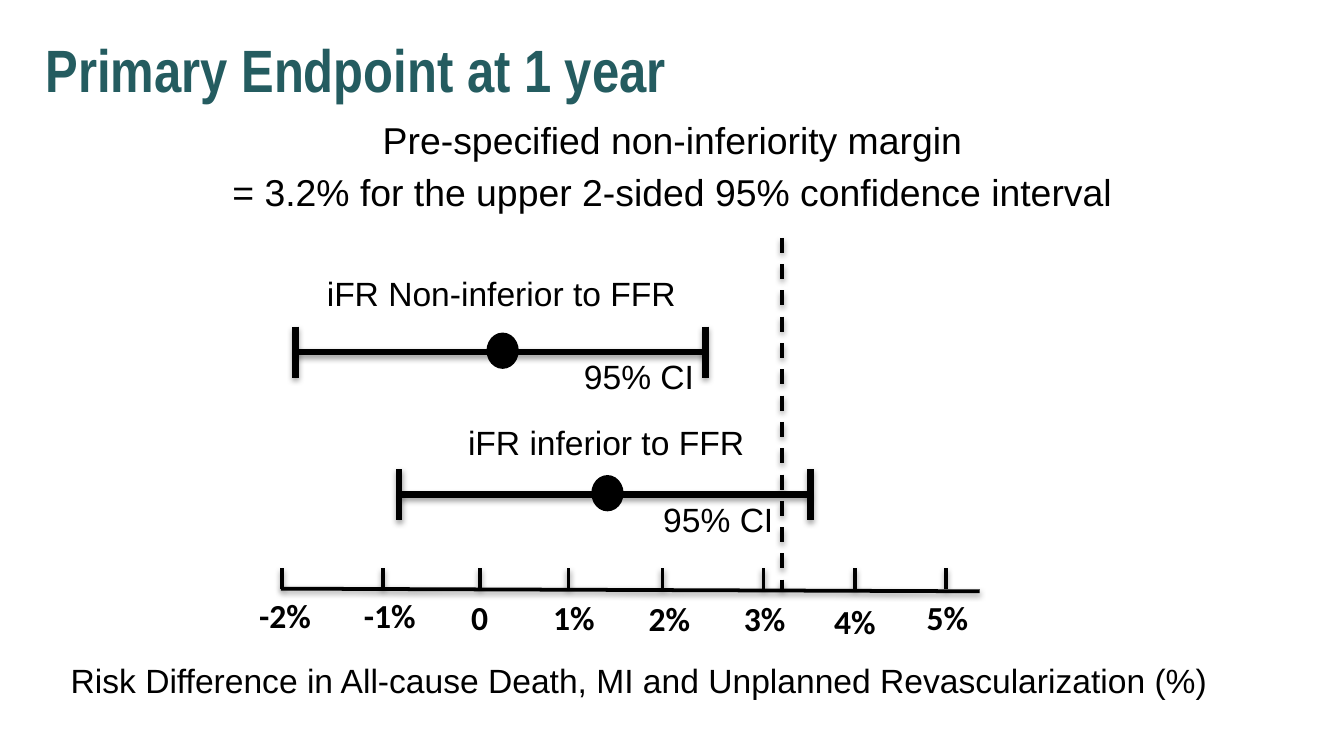
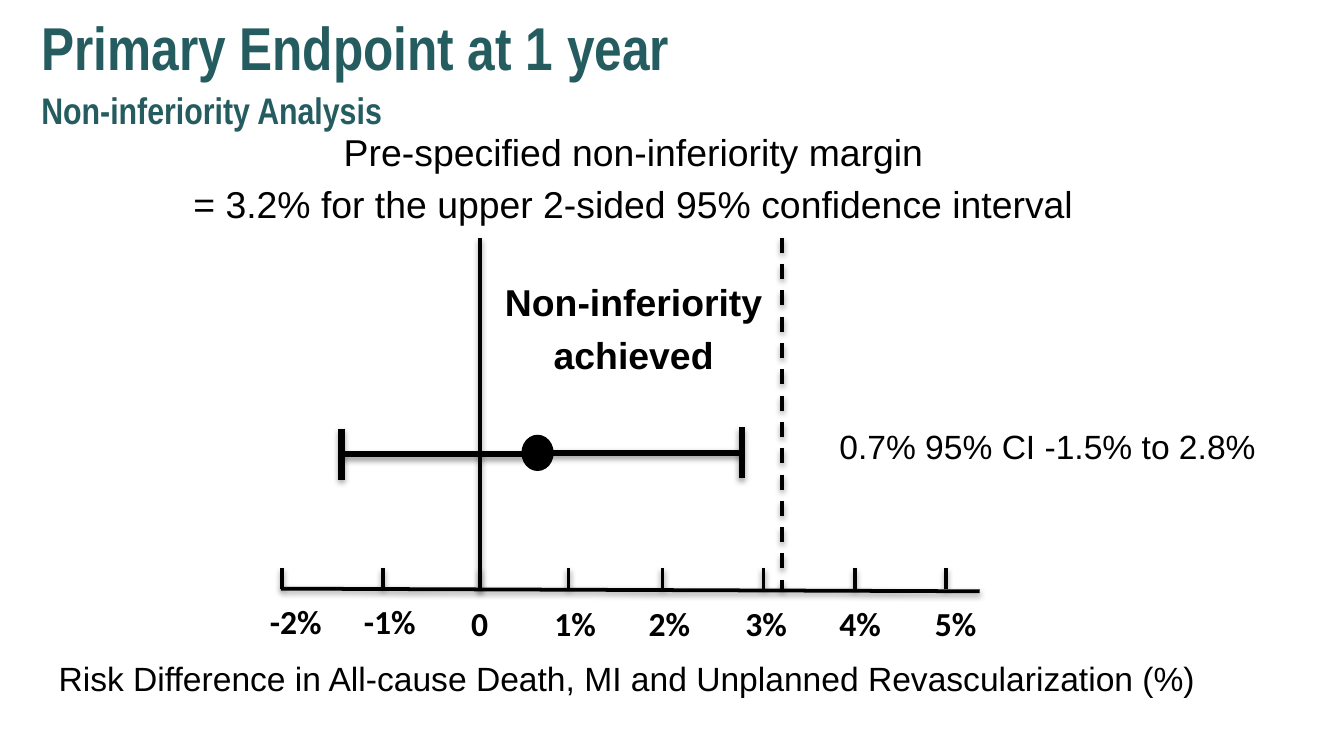
from dataclasses import dataclass

from lxml import etree
from pptx import Presentation
from pptx.dml.color import RGBColor
from pptx.enum import dml, shapes, text
from pptx.oxml.ns import qn
from pptx.slide import Slide
from pptx.util import Inches, Pt


@dataclass(frozen=True)
class Theme:
    ink: RGBColor = RGBColor(0x00, 0x00, 0x00)
    teal: RGBColor = RGBColor(0x24, 0x5C, 0x60)
    head: str = "Arial Narrow"
    body: str = "Arial"
    scale: str = "Calibri"
    title: float = 32
    tall: float = 32.4
    sub: float = 19.8
    large: float = 20
    small: float = 18
    thin: float = 2
    thick: float = 3.5


THEME = Theme()


@dataclass(frozen=True)
class Label:
    lines: tuple[str, ...]
    left: float
    top: float
    width: float
    height: float = 0.4
    size: float = THEME.small
    font: str = THEME.body
    bold: bool = False
    wrap: bool = False


@dataclass(frozen=True)
class Title:
    lines: tuple[str, ...]
    sizes: tuple[float, ...]
    left: float
    top: float
    width: float
    height: float
    pitch: float


@dataclass(frozen=True)
class Span:
    """Confidence interval: ends, middle dot, and height of each part."""
    low: float
    mid: float
    high: float
    left_y: float
    right_y: float
    dot_y: float


@dataclass(frozen=True)
class Page:
    title: Title
    labels: tuple[Label, ...]
    spans: tuple[Span, ...]
    marks: tuple[float, ...]
    drops: tuple[float, ...]
    zero: bool = False


TICKS = (2.1, 2.85, 3.57, 4.23, 4.93, 5.68, 6.36, 7.04)
NAMES = ("-2%", "-1%", "0", "1%", "2%", "3%", "4%", "5%")
AXIS = 4.38
TOP = 1.77
ZERO = TICKS[NAMES.index("0")]
MARGIN = 5.82
CAP = 0.38
DOT_W, DOT_H = 0.24, 0.27


def add_line(slide: Slide, x1: float, y1: float, x2: float, y2: float,
             width: float = THEME.thin, dash: bool = False) -> None:
    """Black line with a soft shadow below it."""
    line = slide.shapes.add_connector(
        shapes.MSO_CONNECTOR.STRAIGHT,
        Inches(x1), Inches(y1), Inches(x2), Inches(y2))
    line.line.color.rgb = THEME.ink
    line.line.width = Pt(width)
    if dash:
        line.line.dash_style = dml.MSO_LINE.DASH
    effects = etree.SubElement(line._element.spPr, qn("a:effectLst"))
    shadow = etree.SubElement(
        effects, qn("a:outerShdw"), blurRad=str(Pt(3.1)), dist=str(Pt(1.6)),
        dir="5400000", rotWithShape="0")
    tint = etree.SubElement(shadow, qn("a:srgbClr"), val=str(THEME.ink))
    etree.SubElement(tint, qn("a:alpha"), val="38000")


def add_label(slide: Slide, label: Label) -> None:
    box = slide.shapes.add_textbox(
        Inches(label.left), Inches(label.top),
        Inches(label.width), Inches(label.height))
    frame = box.text_frame
    frame.word_wrap = label.wrap
    frame.text = "\n".join(label.lines)
    for i, para in enumerate(frame.paragraphs):
        para.alignment = text.PP_ALIGN.CENTER
        if i:
            para.space_before = Pt(label.size * 0.2)
        para.font.name = label.font
        para.font.size = Pt(label.size)
        para.font.bold = label.bold
        para.font.color.rgb = THEME.ink


def add_title(slide: Slide, title: Title) -> None:
    box = slide.shapes.add_textbox(
        Inches(title.left), Inches(title.top),
        Inches(title.width), Inches(title.height))
    frame = box.text_frame
    frame.word_wrap = True
    frame.vertical_anchor = text.MSO_ANCHOR.MIDDLE
    para = frame.paragraphs[0]
    para.line_spacing = title.pitch
    para.font.name = THEME.head
    para.font.bold = True
    para.font.color.rgb = THEME.teal
    for i, (words, size) in enumerate(zip(title.lines, title.sizes)):
        if i:
            para.add_line_break()
        run = para.add_run()
        run.text = words
        run.font.size = Pt(size)


def add_span(slide: Slide, span: Span) -> None:
    dot = slide.shapes.add_shape(
        shapes.MSO_SHAPE.OVAL,
        Inches(span.mid - DOT_W / 2), Inches(span.dot_y - DOT_H / 2),
        Inches(DOT_W), Inches(DOT_H))
    dot.shadow.inherit = False
    dot.fill.solid()
    dot.fill.fore_color.rgb = THEME.ink
    dot.line.fill.background()
    for end, y in ((span.low, span.left_y), (span.high, span.right_y)):
        add_line(slide, span.mid, y, end, y, THEME.thick)
        add_line(slide, end, y - CAP / 2, end, y + CAP / 2, THEME.thick)


def add_axis(slide: Slide, page: Page) -> None:
    """Scale with ticks, tick labels and the margin line."""
    add_line(slide, 2.09, AXIS, 7.29, AXIS + 0.02)
    for x in TICKS:
        add_line(slide, x, AXIS - 0.15, x, AXIS)
    for name, mid, top in zip(NAMES, page.marks, page.drops):
        width = {1: 0.33, 2: 0.51, 3: 0.59}[len(name)]
        add_label(slide, Label((name,), mid - width / 2, top, width,
                               font=THEME.scale, bold=True))
    if page.zero:
        add_line(slide, ZERO, TOP, ZERO, AXIS + 0.02)
    add_line(slide, MARGIN, TOP, MARGIN, AXIS + 0.01, dash=True)


def margin_note(left: float, top: float) -> Label:
    return Label(("Pre-specified non-inferiority margin",
                  "= 3.2% for the upper 2-sided 95% confidence interval"),
                 left, top, 9.49, 0.85, THEME.large, wrap=True)


def caption(left: float, top: float) -> Label:
    return Label(("Risk Difference in All-cause Death, MI and "
                  "Unplanned Revascularization (%)",),
                 left, top, 9.49, wrap=True)


HEAD = "Primary Endpoint at 1 year"
PAGES = (
    Page(
        Title((HEAD,), (THEME.title,), 0.24, 0.03, 7.29, 0.86, 1.2),
        (margin_note(0.26, 0.82),
         Label(("iFR Non-inferior to FFR",), 2.32, 1.98, 2.82),
         Label(("iFR inferior to FFR",), 3.37, 3.09, 2.28),
         Label(("95% CI",), 4.24, 2.6, 1.03),
         Label(("95% CI",), 4.83, 3.66, 1.03),
         caption(0.01, 4.86)),
        (Span(2.2, 3.74, 5.25, 2.62, 2.62, 2.61),
         Span(2.97, 4.52, 6.03, 3.68, 3.68, 3.67)),
        (2.12, 2.9, 3.57, 4.27, 4.98, 5.69, 6.36, 7.05),
        (4.38, 4.38, 4.39, 4.39, 4.4, 4.4, 4.42, 4.39)),
    Page(
        Title((HEAD, "Non-inferiority Analysis"), (THEME.tall, THEME.sub),
              0.21, -0.03, 7.54, 1.06, 1.1),
        (margin_note(-0.03, 0.91),
         Label(("Non-inferiority", "achieved"), 3.64, 2.03, 2.15, 0.84,
               THEME.large, bold=True),
         Label(("0.7% 95% CI -1.5% to 2.8%",), 6.13, 3.12, 3.33),
         caption(-0.08, 4.85)),
        (Span(2.54, 4.0, 5.52, 3.38, 3.37, 3.37),),
        (2.2, 2.9, 3.57, 4.28, 4.98, 5.7, 6.4, 7.11),
        (4.42,) * 2 + (4.44,) * 6,
        zero=True),
)


def main() -> None:
    deck = Presentation()
    deck.slide_width = Inches(10)
    deck.slide_height = Inches(10 * 9 / 16)
    for page in PAGES:
        slide = deck.slides.add_slide(deck.slide_layouts[6])
        add_title(slide, page.title)
        add_axis(slide, page)
        for span in page.spans:
            add_span(slide, span)
        for label in page.labels:
            add_label(slide, label)
    deck.save("out.pptx")


if __name__ == "__main__":
    main()
